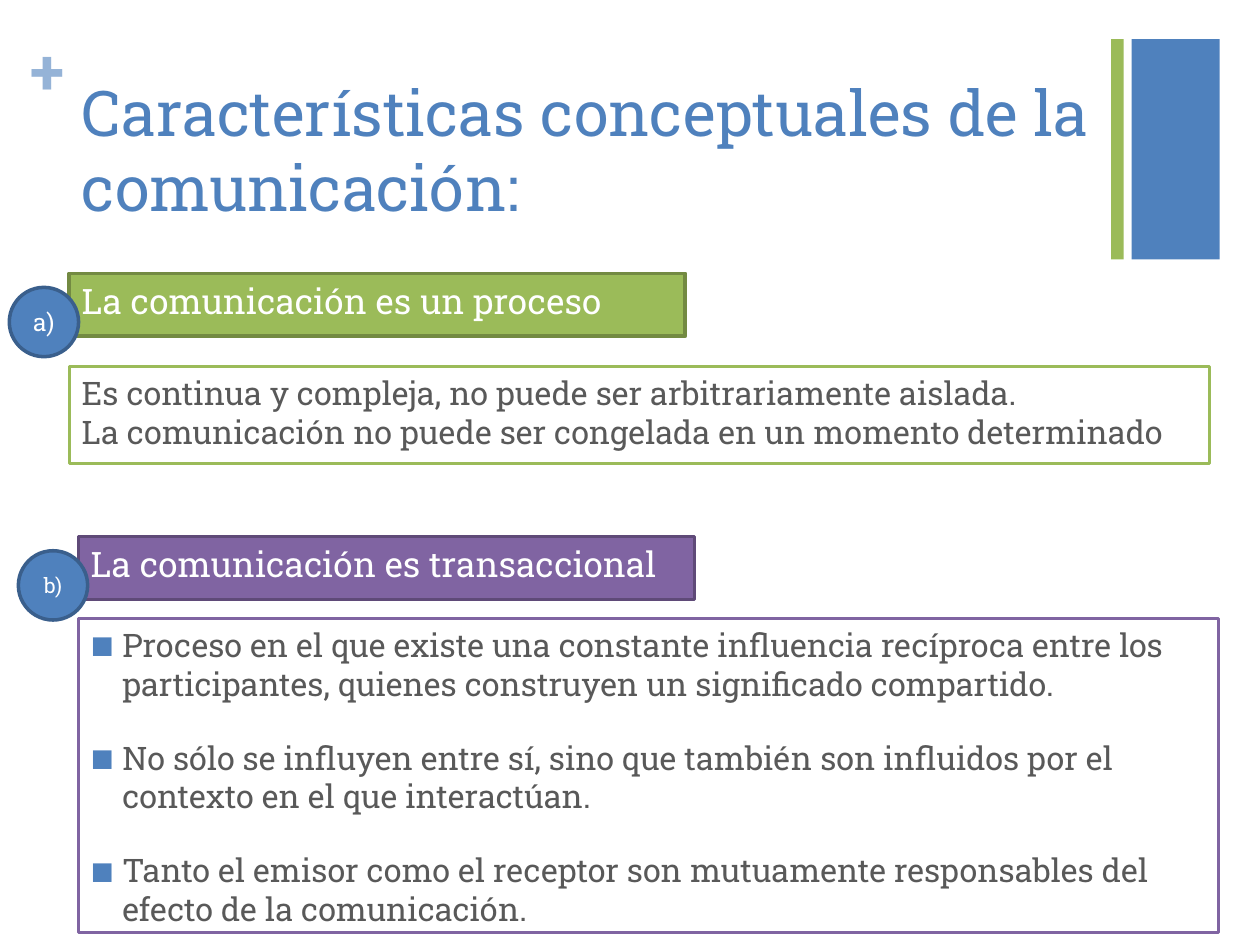
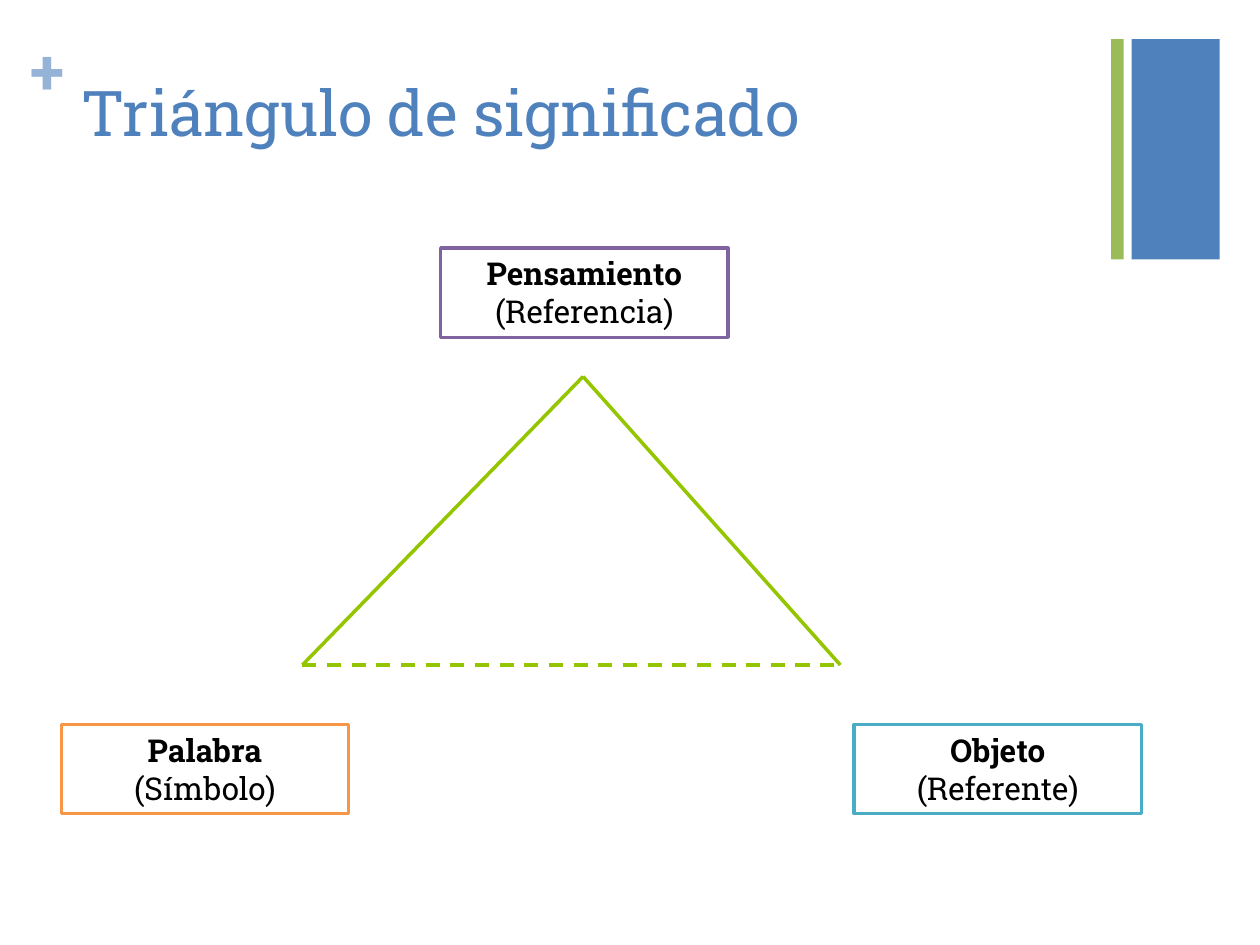
from lxml.etree import SubElement
from pptx import Presentation
from pptx.dml.color import RGBColor
from pptx.enum.dml import MSO_LINE
from pptx.enum.shapes import MSO_CONNECTOR, MSO_SHAPE
from pptx.enum.text import MSO_ANCHOR, MSO_AUTO_SIZE, PP_ALIGN
from pptx.oxml.ns import qn
from pptx.util import Pt

FONT = "Roboto Slab"
COLORS = {
    "blue": "4F81BD", "pale_blue": "95B3D7", "dark_blue": "3A5F8C",
    "green": "9BBB59", "dark_green": "738A42", "lime": "94C600",
    "purple": "8064A2", "dark_purple": "5F4A78",
    "orange": "F79646", "aqua": "4BACC6",
    "white": "FFFFFF", "black": "000000", "gray": "595959",
}

FEATURES_TITLE = "Características conceptuales de la comunicación:"
FEATURES = [
    {
        "badge": "a)", "badge_size": 14, "heading": "La comunicación es un proceso",
        "color": "green", "edge": "dark_green", "bulleted": False,
        "left": 39.6, "top": 156.2, "detail_top": 209.5, "detail_height": 55.4,
        "details": ["Es continua y compleja, no puede ser arbitrariamente aislada.\n"
                    "La comunicación no puede ser congelada en un momento determinado"],
    },
    {
        "badge": "b)", "badge_size": 12, "heading": "La comunicación es transaccional",
        "color": "purple", "edge": "dark_purple", "bulleted": True,
        "left": 44.8, "top": 306.7, "detail_top": 353.5, "detail_height": 179.3,
        "details": [
            "Proceso en el que existe una constante influencia recíproca entre los "
            "participantes, quienes construyen un significado compartido.",
            "No sólo se influyen entre sí, sino que también son influidos por el "
            "contexto en el que interactúan.",
            "Tanto el emisor como el receptor son mutuamente responsables del "
            "efecto de la comunicación.",
        ],
    },
]

TRIANGLE_TITLE = "Triángulo de significado"
CONCEPTS = [
    ("Pensamiento", "(Referencia)", "purple", 251.8, 141.8),
    ("Palabra", "(Símbolo)", "orange", 35, 414),
    ("Objeto", "(Referente)", "aqua", 488, 414),
]
APEX, WORD_CORNER, OBJECT_CORNER = (333.2, 215.2), (172.8, 380), (480.2, 380)
SIDES = [
    (APEX, WORD_CORNER, MSO_LINE.SOLID),
    (APEX, OBJECT_CORNER, MSO_LINE.SOLID),
    (WORD_CORNER, OBJECT_CORNER, MSO_LINE.DASH),
]


def rgb(name):
    return RGBColor.from_string(COLORS[name])


def add_text(paragraph, text, size, color, bold=False):
    for index, line in enumerate(text.split("\n")):
        if index:
            paragraph.add_line_break()
        run = paragraph.add_run()
        run.text = line
        run.font.name = FONT
        run.font.size = Pt(size)
        run.font.bold = bold
        run.font.color.rgb = rgb(color)


def add_panel(slide, box, fill, edge=None, preset=MSO_SHAPE.RECTANGLE):
    panel = slide.shapes.add_shape(preset, *map(Pt, box))
    panel.shadow.inherit = False
    panel.fill.solid()
    panel.fill.fore_color.rgb = rgb(fill)
    if edge:
        panel.line.color.rgb = rgb(edge)
        panel.line.width = Pt(2)
    else:
        panel.line.fill.background()
    panel.text_frame.word_wrap = True
    panel.text_frame.vertical_anchor = MSO_ANCHOR.TOP
    return panel


def write_paragraphs(frame, texts, size, color, align=PP_ALIGN.LEFT, gap=0, bulleted=False):
    for index, text in enumerate(texts):
        paragraph = frame.add_paragraph() if index else frame.paragraphs[0]
        paragraph.alignment = align
        paragraph.space_before = Pt(gap)
        if bulleted:
            add_bullet(paragraph)
        add_text(paragraph, text, size, color)


def add_bullet(paragraph):
    properties = paragraph._p.get_or_add_pPr()
    properties.set("marL", str(Pt(18)))
    properties.set("indent", str(-Pt(18)))
    bullet_color = SubElement(properties, qn("a:buClr"))
    SubElement(bullet_color, qn("a:srgbClr"), val=COLORS["blue"])
    SubElement(properties, qn("a:buSzPct"), val="75000")
    SubElement(properties, qn("a:buFont"), typeface=FONT)
    SubElement(properties, qn("a:buChar"), char="■")


def add_base_slide(deck, heading):
    slide = deck.slides.add_slide(deck.slide_layouts[5])
    add_panel(slide, (646.6, 22.3, 50.4, 126), "blue")
    add_panel(slide, (635, 22.3, 7.2, 126), "green")

    plus = slide.shapes.add_textbox(Pt(17.3), Pt(18), Pt(20.9), Pt(43.9)).text_frame
    plus.margin_left = plus.margin_right = plus.margin_top = plus.margin_bottom = 0
    plus.word_wrap = True
    add_text(plus.paragraphs[0], "+", 36, "pale_blue", bold=True)

    title = slide.shapes.title
    title.left, title.top, title.width, title.height = map(Pt, (39.6, 38.2, 594.7, 87.8))
    title.text_frame.auto_size = MSO_AUTO_SIZE.NONE
    title.text_frame.vertical_anchor = MSO_ANCHOR.TOP
    write_paragraphs(title.text_frame, [heading], 36, "blue")
    return slide


def add_feature(slide, feature):
    left, top = feature["left"], feature["top"]
    banner = add_panel(slide, (left, top, 352, 36), feature["color"], feature["edge"])
    write_paragraphs(banner.text_frame, [feature["heading"]], 20, "white")

    detail = add_panel(slide, (left, feature["detail_top"], 651.6, feature["detail_height"]),
                       "white", feature["color"])
    write_paragraphs(detail.text_frame, feature["details"], 18.5, "gray",
                     gap=20, bulleted=feature["bulleted"])

    badge = add_panel(slide, (left - 34.3, top + 8, 39.6, 39.6), "blue", "dark_blue",
                      MSO_SHAPE.OVAL)
    badge.text_frame.vertical_anchor = MSO_ANCHOR.MIDDLE
    write_paragraphs(badge.text_frame, [feature["badge"]], feature["badge_size"], "white",
                     PP_ALIGN.CENTER)


def add_concept(slide, term, role, color, left, top):
    frame = add_panel(slide, (left, top, 164.2, 51), "white", color).text_frame
    write_paragraphs(frame, [term, role], 18, "black", PP_ALIGN.CENTER)
    frame.paragraphs[0].runs[0].font.bold = True


def add_side(slide, start, end, dash):
    side = slide.shapes.add_connector(MSO_CONNECTOR.STRAIGHT, *map(Pt, start + end))
    side.line.color.rgb = rgb("lime")
    side.line.width = Pt(2)
    side.line.dash_style = dash
    SubElement(side._element.spPr, qn("a:effectLst"))


def main():
    deck = Presentation()
    deck.slide_width, deck.slide_height = Pt(720), Pt(540)

    features_slide = add_base_slide(deck, FEATURES_TITLE)
    for feature in FEATURES:
        add_feature(features_slide, feature)

    triangle_slide = add_base_slide(deck, TRIANGLE_TITLE)
    for concept in CONCEPTS:
        add_concept(triangle_slide, *concept)
    for side in SIDES:
        add_side(triangle_slide, *side)

    deck.save("out.pptx")


if __name__ == "__main__":
    main()
